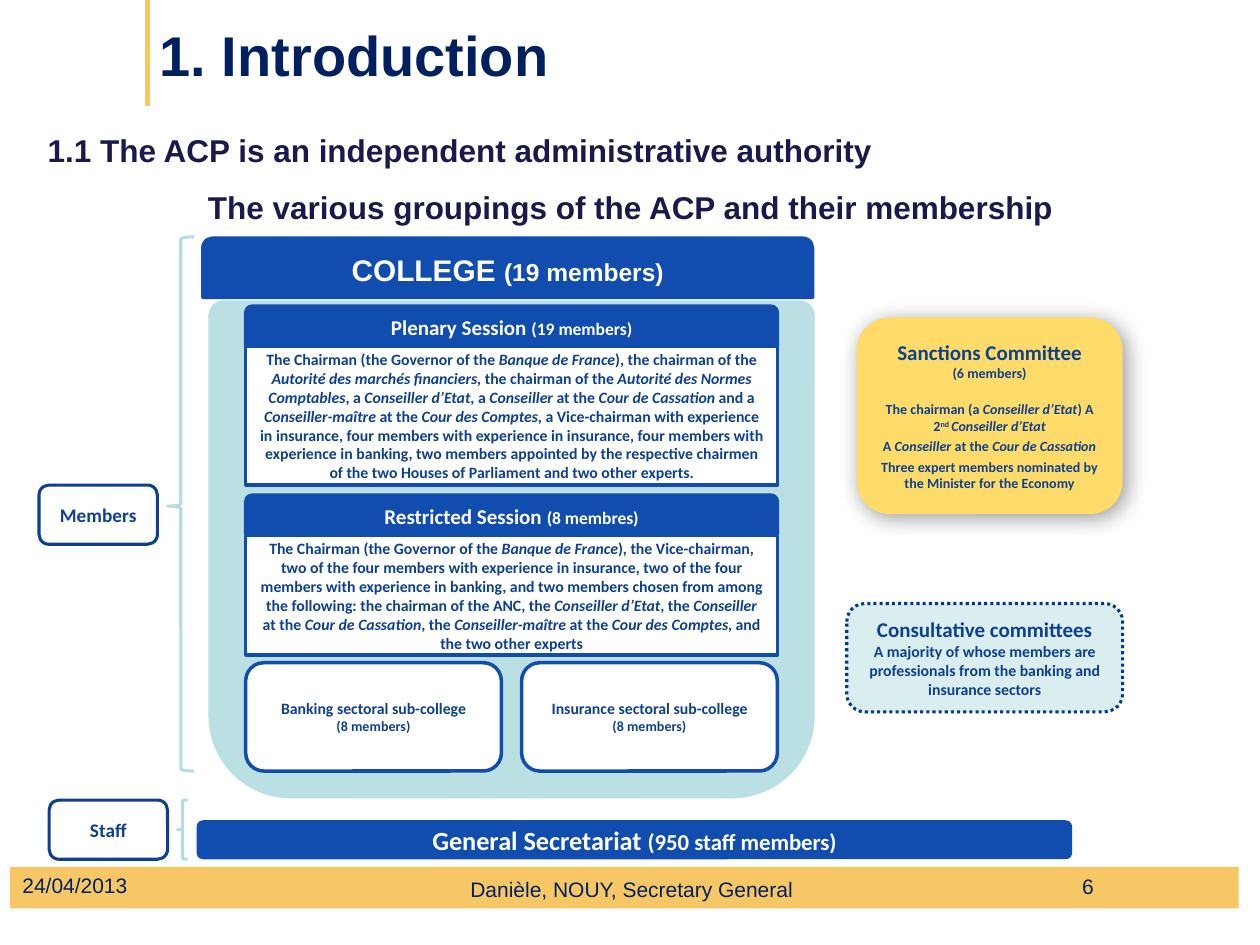
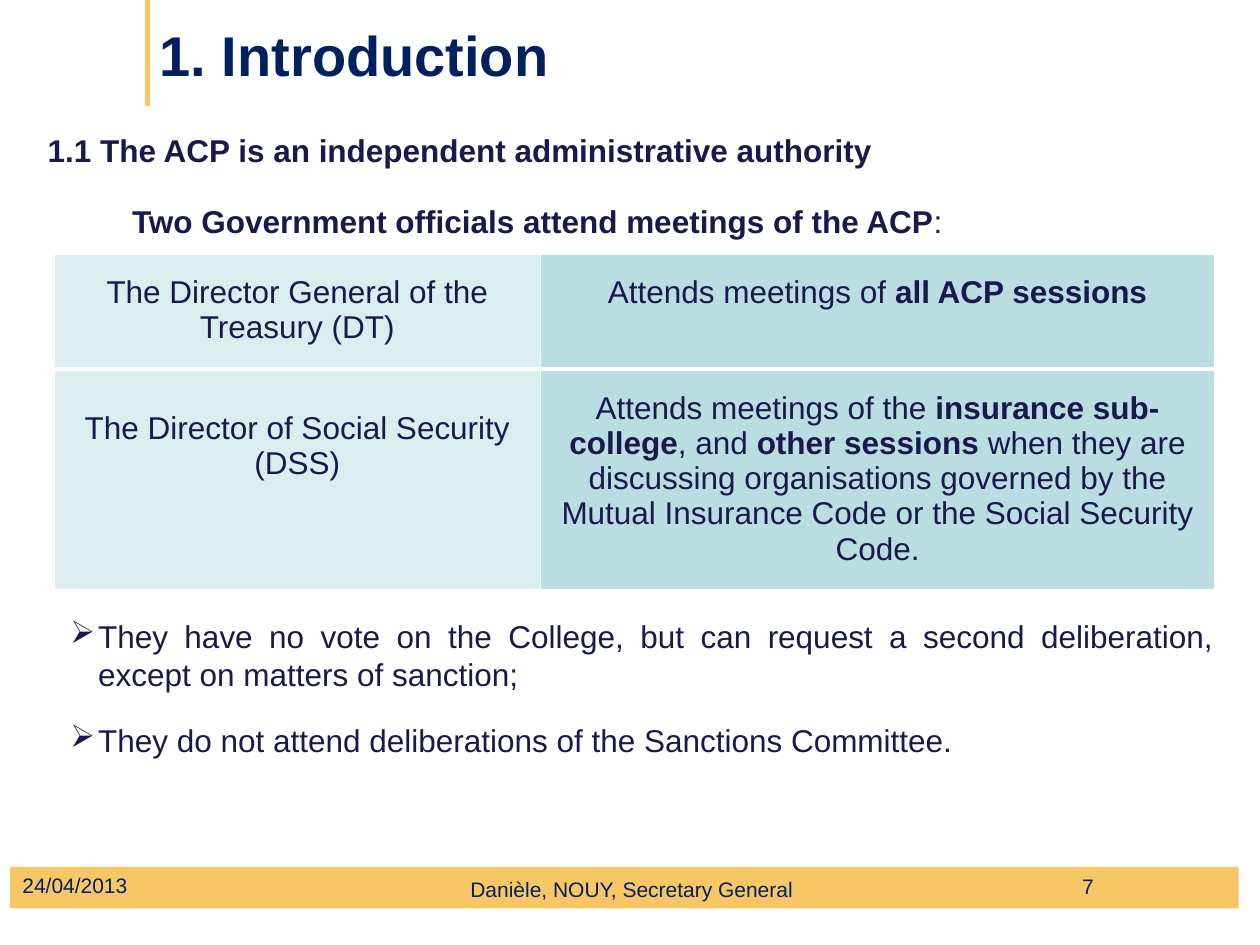
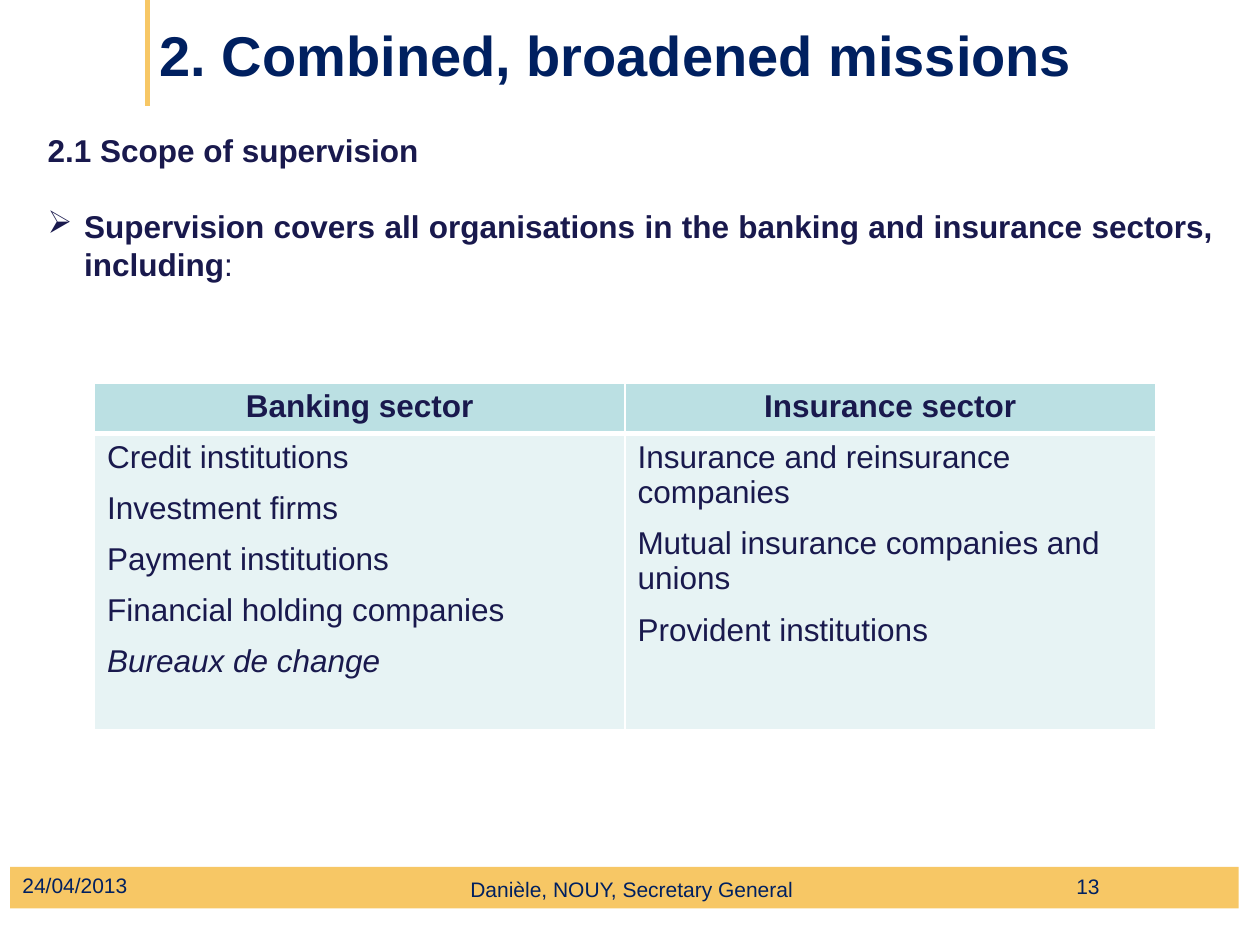
from dataclasses import dataclass
from typing import Iterator, NamedTuple, Optional

from lxml import etree
from pptx import Presentation
from pptx import util as u
from pptx.dml.color import RGBColor
from pptx.enum import dml, shapes, text
from pptx.oxml import parse_xml
from pptx.oxml.ns import nsdecls, qn

WHITE, AMBER, NAVY, INK = "FFFFFF", "F7C765", "002060", "19194D"
BLUE, DEEP_BLUE, TEAL, PALE_TEAL = "114DAF", "0E4090", "BBE0E3", "DAEDEF"
BRACE_TEAL = "B6DCDF"
LEFT, CENTER, JUSTIFY = (text.PP_ALIGN.LEFT, text.PP_ALIGN.CENTER,
                         text.PP_ALIGN.JUSTIFY)
TOP, MIDDLE = text.MSO_ANCHOR.TOP, text.MSO_ANCHOR.MIDDLE
PRESET = shapes.MSO_SHAPE

# Each mark switches its style on or off inside a line of text
MARKS = {"*": "bold", "_": "italic", "^": "raised", "|": "small"}


class Line(NamedTuple):
    text: str
    size: float
    small: float = 0
    before: float = 0
    after: float = 0


@dataclass
class Panel:
    preset: int
    left: float
    top: float
    width: float
    height: float
    fill: Optional[str] = None
    line: Optional[str] = None
    weight: float = 2
    lines: tuple[Line, ...] = ()
    color: str = DEEP_BLUE
    font: str = "Calibri"
    adjust: tuple[float, ...] = ()
    rotation: float = 0
    dotted: bool = False
    shadow: bool = False


class Cell(NamedTuple):
    paragraphs: tuple[str, ...]
    fill: str
    align: int = CENTER
    bold: bool = False
    top_margin: float = 0.05


def rgb(color: str) -> RGBColor:
    return RGBColor.from_string(color)


def split_runs(marked: str) -> Iterator[tuple[str, set]]:
    """Yield each stretch of text with the styles switched on for it."""
    styles, chunk = set(), ""
    for letter in marked:
        if letter in MARKS:
            if chunk:
                yield chunk, set(styles)
            styles ^= {MARKS[letter]}
            chunk = ""
        else:
            chunk += letter
    if chunk:
        yield chunk, styles


def write(frame, marked: str, *, size: float = 18, small: float = 0,
          font: str = "Arial", color: str = INK, bold: bool = False,
          align: int = LEFT, before: float = 0, after: float = 0,
          indent: float = 0, hang: float = 0, bullet: str = "") -> None:
    """Add one paragraph to a text frame."""
    first = frame.paragraphs[0]
    paragraph = frame.add_paragraph() if first.runs else first
    if indent or bullet:
        properties = paragraph._p.get_or_add_pPr()
        properties.set("marL", str(u.Inches(indent)))
        properties.set("indent", str(-u.Inches(hang)))
        if bullet:
            etree.SubElement(properties, qn("a:buChar")).set("char", bullet)
    paragraph.alignment = align
    paragraph.space_before, paragraph.space_after = u.Pt(before), u.Pt(after)
    for chunk, styles in split_runs(marked):
        run = paragraph.add_run()
        run.text = chunk
        run.font.name = font
        run.font.size = u.Pt(small if "small" in styles else size)
        run.font.bold = bold != ("bold" in styles)
        run.font.italic = "italic" in styles
        run.font.color.rgb = rgb(color)
        if "raised" in styles:
            run._r.get_or_add_rPr().set("baseline", "30000")


def text_box(slide, left: float, top: float, width: float, height: float,
             anchor: int = MIDDLE):
    box = slide.shapes.add_textbox(u.Inches(left), u.Inches(top),
                                   u.Inches(width), u.Inches(height))
    box.text_frame.word_wrap = True
    box.text_frame.vertical_anchor = anchor
    return box.text_frame


def add_soft_shadow(shape) -> None:
    effects = shape._element.spPr.find(qn("a:effectLst"))
    effects.append(parse_xml(
        f'<a:outerShdw {nsdecls("a")} blurRad="{u.Pt(13)}" dist="{u.Pt(3)}" '
        'dir="2700000" algn="tl" rotWithShape="0"><a:srgbClr val="000000">'
        '<a:alpha val="40000"/></a:srgbClr></a:outerShdw>'))


def draw_panel(slide, panel: Panel) -> None:
    shape = slide.shapes.add_shape(
        panel.preset, u.Inches(panel.left), u.Inches(panel.top),
        u.Inches(panel.width), u.Inches(panel.height))
    shape.shadow.inherit = False
    shape.rotation = panel.rotation
    for index, value in enumerate(panel.adjust):
        shape.adjustments[index] = value
    if panel.fill:
        shape.fill.solid()
        shape.fill.fore_color.rgb = rgb(panel.fill)
    else:
        shape.fill.background()
    if panel.line:
        shape.line.color.rgb = rgb(panel.line)
        shape.line.width = u.Pt(panel.weight)
        if panel.dotted:
            shape.line.dash_style = dml.MSO_LINE.ROUND_DOT
    else:
        shape.line.fill.background()
    if panel.shadow:
        add_soft_shadow(shape)
    frame = shape.text_frame
    frame.word_wrap = True
    frame.vertical_anchor = MIDDLE
    for line in panel.lines:
        write(frame, line.text, size=line.size, small=line.small,
              before=line.before, after=line.after, font=panel.font,
              color=panel.color, bold=True, align=CENTER)


def add_border(cell, side: str, weight: float) -> None:
    cell._tc.get_or_add_tcPr().append(parse_xml(
        f'<a:ln{side} {nsdecls("a")} w="{u.Pt(weight)}"><a:solidFill>'
        f'<a:srgbClr val="{WHITE}"/></a:solidFill></a:ln{side}>'))


def draw_table(slide, left: float, top: float, widths: list[float],
               heights: list[float], rows: list[list[Cell]]) -> None:
    table = slide.shapes.add_table(
        len(rows), len(widths), u.Inches(left), u.Inches(top),
        u.Inches(sum(widths)), u.Inches(sum(heights))).table
    table.first_row = table.horz_banding = False
    for column, width in zip(table.columns, widths):
        column.width = u.Inches(width)
    for r, (contents, height) in enumerate(zip(rows, heights)):
        table.rows[r].height = u.Inches(height)
        for c, content in enumerate(contents):
            cell = table.cell(r, c)
            # The rule between rows is heavier than the outer ones
            upper, lower = (1 if r == 0 else 3), (1 if r == len(rows) - 1 else 3)
            for side, weight in zip("LRTB", (1, 1, upper, lower)):
                add_border(cell, side, weight)
            cell.fill.solid()
            cell.fill.fore_color.rgb = rgb(content.fill)
            cell.margin_top = u.Inches(content.top_margin)
            for i, paragraph in enumerate(content.paragraphs):
                write(cell.text_frame, paragraph, bold=content.bold,
                      align=content.align, before=9 if i else 0)


def start_slide(deck, title: str, section: str, number: int):
    """Draw the shared furniture; return the slide and its body text."""
    slide = deck.slides.add_slide(deck.slide_layouts[6])
    draw_panel(slide, Panel(PRESET.RECTANGLE, 0.08, 6.88, 9.75, 0.33, AMBER))
    rule = slide.shapes.add_connector(
        shapes.MSO_CONNECTOR.STRAIGHT, u.Inches(1.17), u.Inches(0),
        u.Inches(1.17), u.Inches(0.84))
    rule.line.color.rgb = rgb(AMBER)
    rule.line.width = u.Pt(2.75)
    etree.SubElement(rule._element.spPr, qn("a:effectLst"))

    write(text_box(slide, 1.17, 0, 7.84, 0.86), title,
          size=32, color=NAVY, bold=True)
    footers = [(0.08, 6.87, 1.17, "24/04/2013", LEFT),
               (8.36, 6.88, 0.55, str(number), CENTER),
               (3.43, 6.9, 3.17, "Danièle, NOUY, Secretary General", CENTER)]
    for left, top, width, words, align in footers:
        write(text_box(slide, left, top, width, 0.31), words,
              size=12, color=NAVY, align=align)

    body = text_box(slide, 0.28, 0.99, 9.45, 1, TOP)
    write(body, section, bold=True, align=JUSTIFY)
    return slide, body


def session(top: float, height: float, heading: str,
            members: str) -> list[Panel]:
    """A blue heading with the list of members under it."""
    return [
        Panel(PRESET.ROUND_2_SAME_RECTANGLE, 1.95, top, 4.22, 0.31, BLUE, BLUE,
              lines=(Line(heading, 12, 10),), color=WHITE),
        Panel(PRESET.RECTANGLE, 1.95, top + 0.32, 4.22, height, WHITE, BLUE,
              lines=(Line(members, 9),)),
    ]


def sub_college(left: float, name: str) -> Panel:
    return Panel(PRESET.ROUNDED_RECTANGLE, left, 5.26, 2.03, 0.86, WHITE, BLUE,
                 lines=(Line(name, 9), Line("(8 members)", 8)))


def group_label(left: float, top: float, name: str) -> Panel:
    return Panel(PRESET.ROUNDED_RECTANGLE, left, top, 0.94, 0.47, WHITE,
                 DEEP_BLUE, 1.75, (Line(name, 11),))


def brace(left: float, top: float, width: float, height: float,
          adjust: tuple[float, ...] = ()) -> Panel:
    return Panel(PRESET.LEFT_BRACE, left, top, width, height,
                 line=BRACE_TEAL, weight=1.75, adjust=adjust)


def membership_slide(deck) -> None:
    slide, body = start_slide(
        deck, "1. Introduction",
        "1.1 The ACP is an independent administrative authority", 6)
    write(body, "The various groupings of the ACP and their membership",
          bold=True, align=CENTER, before=11)

    committees = [
        Panel(PRESET.ROUNDED_RECTANGLE, 6.72, 4.79, 2.19, 0.86, PALE_TEAL,
              "003B8E", 1.75, dotted=True, lines=(
                  Line("Consultative committees", 12),
                  Line("A majority of whose members are professionals from "
                       "the banking and insurance sectors", 9))),
        Panel(PRESET.ROUNDED_RECTANGLE, 6.8, 2.52, 2.11, 1.56, "FFDB69",
              shadow=True, lines=(
                  Line("Sanctions Committee", 12),
                  Line("(6 members)", 8),
                  Line("The chairman (a _Conseiller d’Etat_) A 2^nd ^"
                       "_Conseiller d’Etat_", 8, before=11, after=1),
                  Line("A _Conseiller _at the _Cour de Cassation_", 8,
                       before=1, after=1),
                  Line("Three expert members nominated by the Minister for "
                       "the Economy", 8, before=1, after=1))),
    ]
    college = [
        Panel(PRESET.ROUND_2_SAME_RECTANGLE, 1.64, 2.37, 4.84, 3.98, TEAL,
              WHITE, adjust=(0.167, 0.033), rotation=180),
        Panel(PRESET.ROUND_2_SAME_RECTANGLE, 1.61, 1.89, 4.84, 0.47, BLUE,
              BLUE, lines=(Line("COLLEGE |(19 members)", 17, 14),),
              color=WHITE, font="Arial"),
        *session(
            2.43, 1.1, "Plenary Session |(19 members)",
            "The Chairman (the Governor of the _Banque de France_), the "
            "chairman of the _Autorité des marchés financiers, _the chairman "
            "of the _Autorité des Normes Comptables_, a _Conseiller d’Etat_, "
            "a _Conseiller _at the _Cour de Cassation _and a "
            "_Conseiller-maître _at the _Cour des Comptes_, a Vice-chairman "
            "with experience in insurance, four members with experience in "
            "insurance, four members with experience in banking, two members "
            "appointed by the respective chairmen of the two Houses of "
            "Parliament and two other experts."),
        *session(
            3.93, 0.95, "Restricted Session |(8 membres)",
            "The Chairman (the Governor of the _Banque de France_), the "
            "Vice-chairman, two of the four members with experience in "
            "insurance, two of the four members with experience in banking, "
            "and two members chosen from among the following: the chairman "
            "of the ANC, the _Conseiller d’Etat_, the _Conseiller _at the "
            "_Cour de Cassation_, the _Conseiller-maître _at the _Cour des "
            "Comptes_, and the two other experts"),
        sub_college(1.95, "Banking sectoral sub-college"),
        sub_college(4.14, "Insurance sectoral sub-college"),
    ]
    groups = [
        brace(1.33, 1.88, 0.21, 4.24, (0.083, 0.504)),
        group_label(0.31, 3.85, "Members"),
        group_label(0.39, 6.35, "Staff"),
        Panel(PRESET.ROUNDED_RECTANGLE, 1.56, 6.51, 6.95, 0.31, BLUE,
              lines=(Line("General Secretariat |(950 staff members)", 15, 13),),
              color=WHITE),
        brace(1.41, 6.35, 0.08, 0.47),
    ]
    for panel in committees + college + groups:
        draw_panel(slide, panel)


def officials_slide(deck) -> None:
    slide, body = start_slide(
        deck, "1. Introduction",
        "1.1 The ACP is an independent administrative authority", 7)
    write(body, "Two Government officials attend meetings of the ACP*:",
          bold=True, align=JUSTIFY, before=19, indent=0.67)

    remarks = text_box(slide, 0.28, 4.85, 9.45, 1.2, TOP)
    for before, remark in [
            (0, "They have no vote on the College, but can request a second "
                "deliberation, except on matters of sanction;"),
            (16, "They do not attend deliberations of the Sanctions "
                 "Committee.")]:
        write(remarks, remark, align=JUSTIFY, before=before,
              indent=0.4, hang=0.22, bullet="➢")

    attendance = "BADDE1"
    draw_table(slide, 0.43, 2.02, [3.86, 5.35], [0.91, 1.75], [
        [Cell(("The Director General of the Treasury (DT)",), PALE_TEAL,
              top_margin=0.16),
         Cell(("Attends meetings of *all ACP sessions*",), attendance,
              top_margin=0.16)],
        [Cell(("The Director of Social Security (DSS)",), PALE_TEAL,
              top_margin=0.33),
         Cell(("Attends meetings of the *insurance sub-college*, and *other "
               "sessions *when they are discussing organisations governed by "
               "the Mutual Insurance Code or the Social Security Code.",),
              attendance, top_margin=0.17)],
    ])


def scope_slide(deck) -> None:
    slide, body = start_slide(deck, "2. Combined, broadened missions",
                              "2.1 Scope of supervision", 13)
    write(body, "Supervision covers all organisations in the banking and "
          "insurance sectors, including*:", bold=True, align=JUSTIFY,
          before=22, indent=0.29, hang=0.29, bullet="➢")

    banking = ("Credit institutions", "Investment firms",
               "Payment institutions", "Financial holding companies",
               "_Bureaux de change_")
    insurance = ("Insurance and reinsurance companies",
                 "Mutual insurance companies and unions",
                 "Provident institutions")
    draw_table(slide, 0.75, 3.04, [4.21, 4.21], [0.38, 2.35], [
        [Cell((f"{sector} sector",), TEAL, bold=True)
         for sector in ("Banking", "Insurance")],
        [Cell(firms, "E7F3F4", LEFT) for firms in (banking, insurance)],
    ])


def main() -> None:
    deck = Presentation()
    deck.slide_width, deck.slide_height = u.Inches(10), u.Inches(7.5)
    membership_slide(deck)
    officials_slide(deck)
    scope_slide(deck)
    deck.save("out.pptx")


if __name__ == "__main__":
    main()
